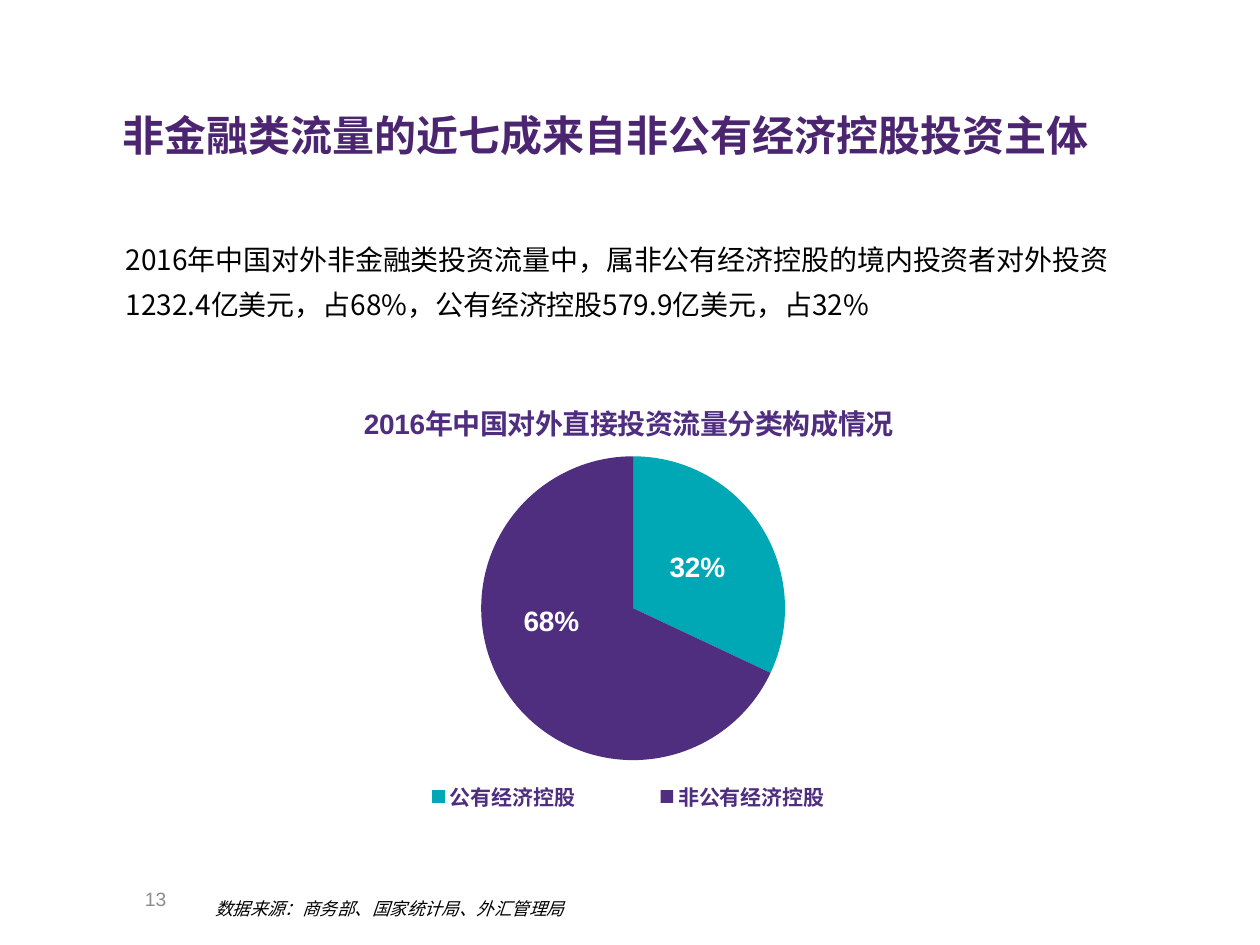
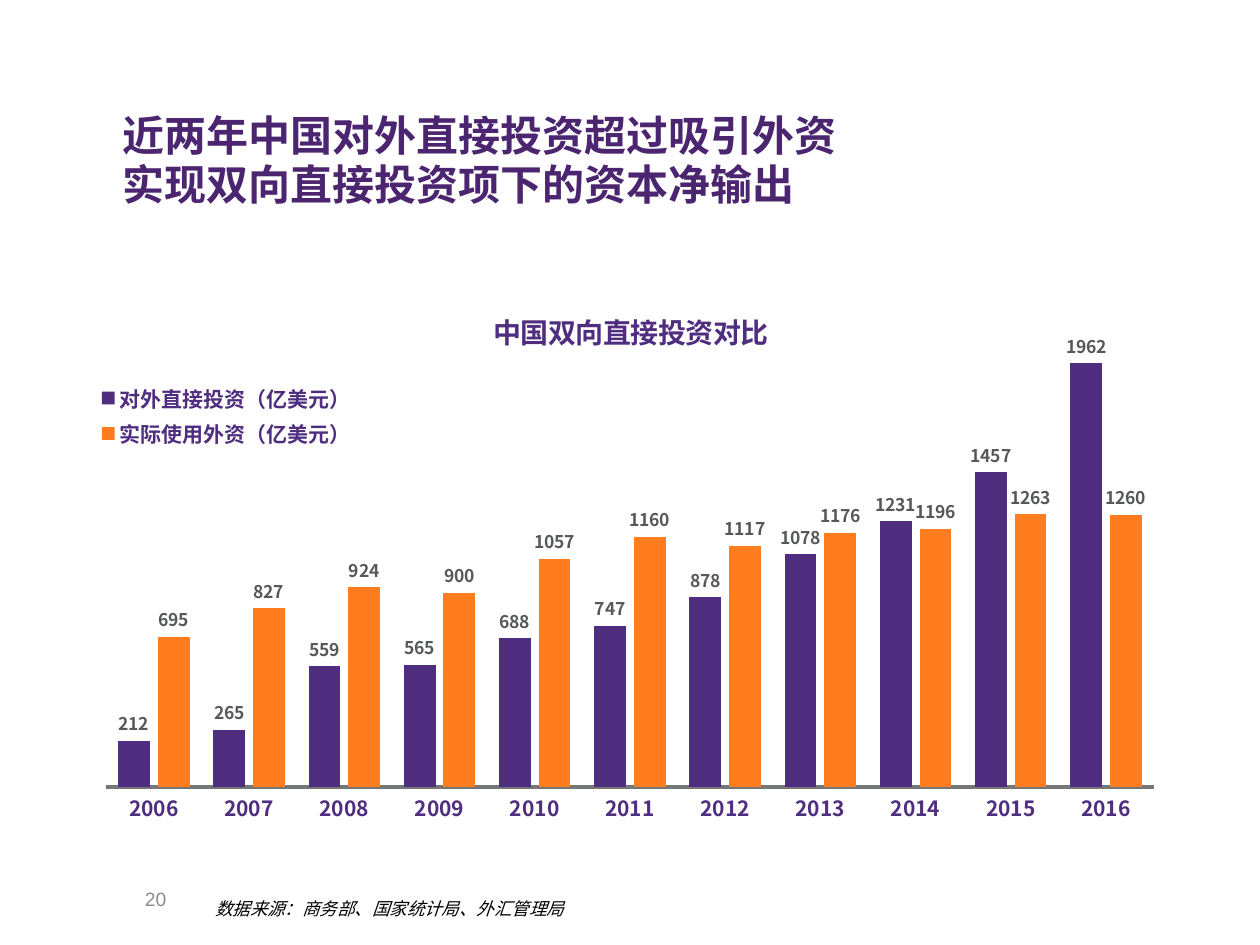
import pptx
import pptx.chart.data
import pptx.dml.color
import pptx.enum.chart
import pptx.enum.text
import pptx.oxml.ns
import pptx.util
from lxml import etree

PX = 9144  # EMU per px, 100 px to the inch
RGB = pptx.dml.color.RGBColor
TITLE_PURPLE = RGB(0x4C, 0x25, 0x70)
PURPLE = RGB(0x4F, 0x2D, 0x7F)
TEAL = RGB(0x00, 0xA7, 0xB5)
ORANGE = RGB(0xFF, 0x7D, 0x1E)
AXIS_GREY = RGB(0x74, 0x76, 0x78)
LABEL_GREY = RGB(0x57, 0x58, 0x5A)
PAGE_GREY = RGB(0x8C, 0x8C, 0x8C)
BLACK = RGB(0, 0, 0)
WHITE = RGB(0xFF, 0xFF, 0xFF)
CJK = "Noto Sans CJK SC"
LATIN = "Arial"
SOURCE = "数据来源：商务部、国家统计局、外汇管理局"

ChartType = pptx.enum.chart.XL_CHART_TYPE
LabelPosition = pptx.enum.chart.XL_LABEL_POSITION
LegendPosition = pptx.enum.chart.XL_LEGEND_POSITION
Align = pptx.enum.text.PP_ALIGN
Anchor = pptx.enum.text.MSO_ANCHOR
qn = pptx.oxml.ns.qn


def set_font(font, size, color, name=CJK, bold=False, italic=False):
    font.size = pptx.util.Pt(size)
    font.bold, font.italic = bold, italic
    font.color.rgb = color
    font.name = name
    etree.SubElement(font._rPr, qn("a:ea")).set("typeface", CJK)


def set_layout(element, inner=False, **fractions):
    """Place a chart part by fractions (x, y, w, h) of the chart area."""
    for old in element.findall(qn("c:layout")):
        element.remove(old)
    layout = etree.Element(qn("c:layout"))
    manual = etree.SubElement(layout, qn("c:manualLayout"))
    if inner:
        etree.SubElement(manual, qn("c:layoutTarget")).set("val", "inner")
    if element.tag != qn("c:dLbl"):
        for axis in "xy":
            etree.SubElement(manual, qn(f"c:{axis}Mode")).set("val", "edge")
    for key, value in fractions.items():
        etree.SubElement(manual, qn(f"c:{key}")).set("val", str(value))
    element.insert(0 if element.tag == qn("c:plotArea") else 1, layout)


class SlideBuilder:
    def __init__(self):
        self.deck = pptx.Presentation()
        self.deck.slide_width, self.deck.slide_height = 1000 * PX, 750 * PX
        self.page = None

    def new_page(self, title, number):
        self.page = self.deck.slides.add_slide(self.deck.slide_layouts[5])
        box = self.page.shapes.title
        box.left, box.top, box.width, box.height = (n * PX for n in (88, 87, 858, 62))
        self.fill_text(box, title, 24, TITLE_PURPLE, inset=(9, 4), bold=True)
        for index, para in enumerate(box.text_frame.paragraphs):
            para.line_spacing = 0.9
            para.space_before = pptx.util.Pt(2.4 if index else 0)
        # Footer: page number and data source
        self.text((86, 693, 55, 40), str(number), 11, PAGE_GREY, name=LATIN,
                  inset=(9, 4), anchor=Anchor.MIDDLE, align=Align.RIGHT)
        self.text((161, 708, 388, 27), SOURCE, 10, BLACK, italic=True)

    def fill_text(self, box, text, size, color, inset=(10, 5), anchor=Anchor.TOP,
                  align=Align.LEFT, **style):
        frame = box.text_frame
        frame.text = text
        frame.word_wrap = True
        frame.auto_size = pptx.enum.text.MSO_AUTO_SIZE.NONE
        frame.vertical_anchor = anchor
        frame.margin_left = frame.margin_right = inset[0] * PX
        frame.margin_top = frame.margin_bottom = inset[1] * PX
        for para in frame.paragraphs:
            para.alignment = align
            set_font(para.font, size, color, **style)

    def text(self, place, text, size, color, **style):
        box = self.page.shapes.add_textbox(*(n * PX for n in place))
        self.fill_text(box, text, size, color, **style)
        return box

    def chart(self, kind, place, title, categories, series, number_format, plot,
              legend, legend_position, name=CJK):
        data = pptx.chart.data.CategoryChartData(number_format=number_format)
        data.categories = categories
        for label, values in series:
            data.add_series(label, values)
        frame = self.page.shapes.add_chart(kind, *(n * PX for n in place), data)
        chart = frame.chart
        set_font(chart.font, 12, PURPLE, name)
        chart.has_title = True
        chart.chart_title.text_frame.text = title
        set_font(chart.chart_title.text_frame.paragraphs[0].font, 16, PURPLE, name, True)
        chart.has_legend = True
        chart.legend.position = legend_position
        chart.legend.include_in_layout = False
        set_font(chart.legend.font, 12, PURPLE, name, True)
        set_layout(chart.legend._element, **legend)
        set_layout(chart._chartSpace.chart.plotArea, inner=True, **plot)
        return chart

    def value_labels(self, series, number_format, position, *font):
        labels = series.data_labels
        labels.show_value = True
        labels.number_format = number_format
        labels.number_format_is_linked = False
        labels.position = position
        set_font(labels.font, *font, bold=True)


def fill(part, color):
    part.format.fill.solid()
    part.format.fill.fore_color.rgb = color


def ownership_page(builder):
    builder.new_page("非金融类流量的近七成来自非公有经济控股投资主体", 13)
    body = builder.text(
        (90, 178, 819, 83),
        "2016年中国对外非金融类投资流量中，属非公有经济控股的境内投资者对外投资"
        "1232.4亿美元，占68%，公有经济控股579.9亿美元，占32%", 16, BLACK)
    body.text_frame.paragraphs[0].line_spacing = pptx.util.Pt(26)

    # Share of each kind of owner
    chart = builder.chart(
        ChartType.PIE, (148, 301, 702, 360), "2016年中国对外直接投资流量分类构成情况",
        ["公有经济控股", "非公有经济控股"], [("Series 1", (0.32, 0.68))], "0%",
        plot=dict(x=0.32, y=0.17, w=0.37, h=0.67),
        legend=dict(x=0.19, y=0.88, w=0.62, h=0.08),
        legend_position=LegendPosition.BOTTOM, name=LATIN)
    chart.plots[0].vary_by_categories = True
    shares = chart.series[0] if hasattr(chart, "series") else chart.plots[0].series[0]
    label_font = (16, WHITE, LATIN)
    builder.value_labels(shares, "0%", LabelPosition.CENTER, *label_font)
    for index, color in enumerate((TEAL, PURPLE)):
        fill(shares.points[index], color)
    # The larger share's label sits a little up and left
    label = shares.points[1].data_label
    label.position = LabelPosition.CENTER
    set_font(label.font, *label_font, bold=True)
    set_layout(label._dLbl, x=-0.02, y=-0.06)


def two_way_page(builder):
    builder.new_page("近两年中国对外直接投资超过吸引外资\n实现双向直接投资项下的资本净输出", 20)

    # Outward and inward investment by year
    chart = builder.chart(
        ChartType.COLUMN_CLUSTERED, (67, 218, 866, 457), "中国双向直接投资对比",
        [str(year) for year in range(2006, 2017)],
        [("对外直接投资（亿美元）",
          (212, 265, 559, 565, 688, 747, 878, 1078, 1231, 1457, 1962)),
         ("实际使用外资（亿美元）",
          (695, 827, 924, 900, 1057, 1160, 1117, 1176, 1196, 1263, 1260))],
        "0", plot=dict(x=0.02, y=0.14, w=0.96, h=0.75),
        legend=dict(x=0, y=0.18, w=0.26, h=0.13),
        legend_position=LegendPosition.LEFT)
    set_layout(chart.chart_title._element, x=0.37, y=0.05)
    columns = chart.plots[0]
    columns.vary_by_categories = False
    columns.gap_width, columns.overlap = 75, -25
    for series, color in zip(columns.series, (PURPLE, ORANGE)):
        fill(series, color)
        builder.value_labels(series, "0", LabelPosition.OUTSIDE_END, 10, LABEL_GREY)

    # Axes
    no_tick = pptx.enum.chart.XL_TICK_MARK.NONE
    years, amounts = chart.category_axis, chart.value_axis
    for axis in (years, amounts):
        axis.major_tick_mark = axis.minor_tick_mark = no_tick
        axis.has_major_gridlines = False
    set_font(years.tick_labels.font, 12, PURPLE, bold=True)
    years.format.line.color.rgb = AXIS_GREY
    years.format.line.width = pptx.util.Pt(2.25)
    amounts.minimum_scale, amounts.maximum_scale, amounts.major_unit = 0, 2000, 500
    amounts.tick_label_position = pptx.enum.chart.XL_TICK_LABEL_POSITION.NONE
    amounts.format.line.fill.background()


def main():
    builder = SlideBuilder()
    ownership_page(builder)
    two_way_page(builder)
    builder.deck.save("out.pptx")


if __name__ == "__main__":
    main()
